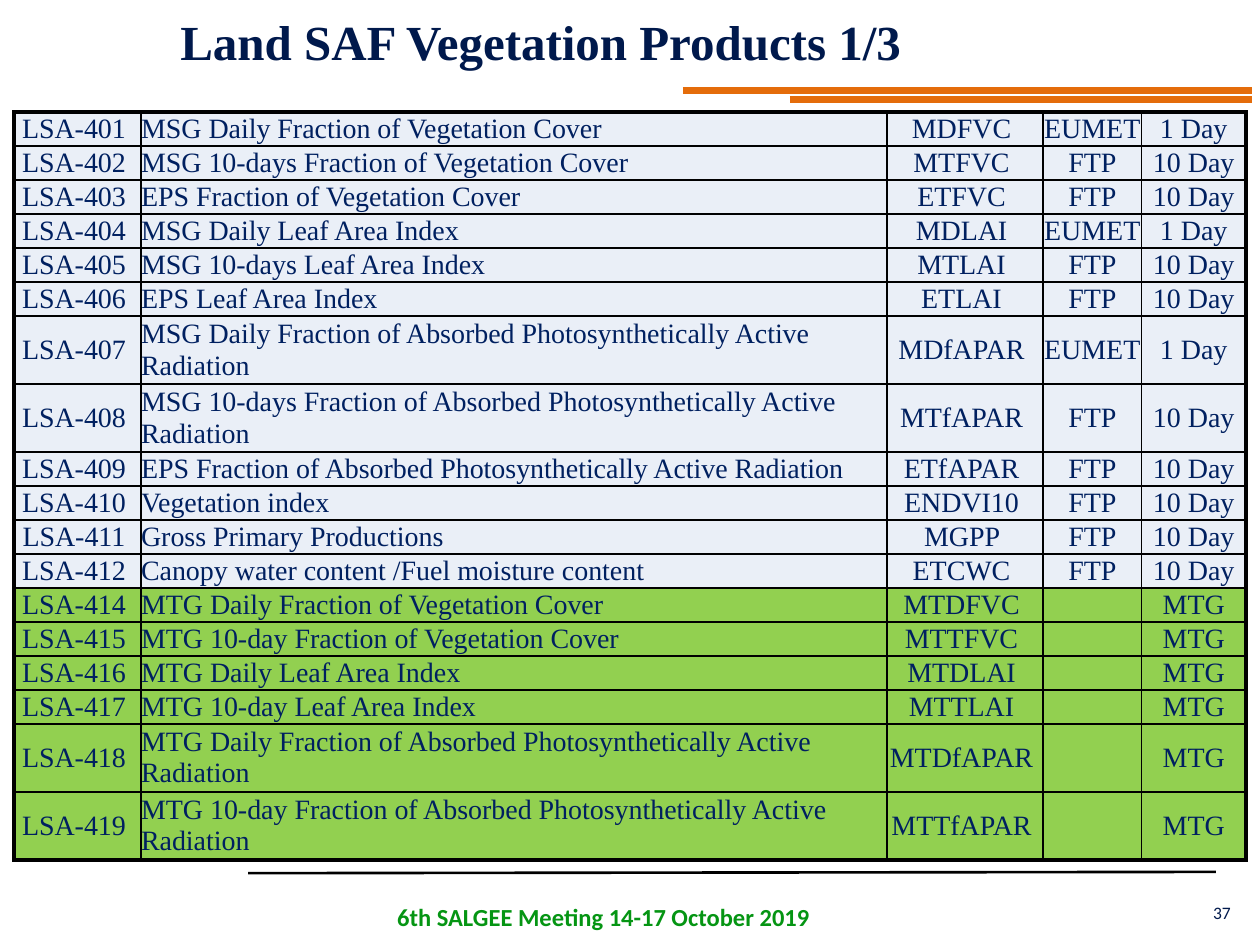
from dataclasses import dataclass

from lxml import etree
from pptx import Presentation
from pptx import util as u
from pptx.dml import color
from pptx.enum import shapes, text
from pptx.oxml import ns


@dataclass(frozen=True)
class Theme:
    serif: str = "Times New Roman"
    sans: str = "Calibri"
    navy: str = "00194C"
    cell_text: str = "002060"
    current: str = "EAEFF7"
    planned: str = "92D050"
    orange: str = "E46C0A"
    green: str = "059513"
    black: str = "000000"
    title_size: float = 28
    cell_size: float = 16
    footer_size: float = 14
    number_size: float = 10
    frame_width: float = 2.25
    grid_width: float = 1


THEME = Theme()
COLUMN_WIDTHS = (1.01, 5.92, 1.24, 0.78, 0.83)
ROW_HEIGHT = 0.27
FAPAR = "Fraction of Absorbed Photosynthetically Active Radiation"

# Number, product, short name, delivery, frequency
CURRENT_PRODUCTS = [
    ("401", "MSG Daily Fraction of Vegetation Cover", "MDFVC", "EUMET", "1 Day"),
    ("402", "MSG 10-days Fraction of Vegetation Cover", "MTFVC", "FTP", "10 Day"),
    ("403", "EPS Fraction of Vegetation Cover", "ETFVC", "FTP", "10 Day"),
    ("404", "MSG Daily Leaf Area Index", "MDLAI", "EUMET", "1 Day"),
    ("405", "MSG 10-days Leaf Area Index", "MTLAI", "FTP", "10 Day"),
    ("406", "EPS Leaf Area Index", "ETLAI", "FTP", "10 Day"),
    ("407", f"MSG Daily {FAPAR}", "MDfAPAR", "EUMET", "1 Day"),
    ("408", f"MSG 10-days {FAPAR}", "MTfAPAR", "FTP", "10 Day"),
    ("409", f"EPS {FAPAR}", "ETfAPAR", "FTP", "10 Day"),
    ("410", "Vegetation index", "ENDVI10", "FTP", "10 Day"),
    ("411", "Gross Primary Productions", "MGPP", "FTP", "10 Day"),
    ("412", "Canopy water content /Fuel moisture content", "ETCWC", "FTP", "10 Day"),
]
PLANNED_PRODUCTS = [
    ("414", "MTG Daily Fraction of Vegetation Cover", "MTDFVC", "", "MTG"),
    ("415", "MTG 10-day Fraction of Vegetation Cover", "MTTFVC", "", "MTG"),
    ("416", "MTG Daily Leaf Area Index", "MTDLAI", "", "MTG"),
    ("417", "MTG 10-day Leaf Area Index", "MTTLAI", "", "MTG"),
    ("418", f"MTG Daily {FAPAR}", "MTDfAPAR", "", "MTG"),
    ("419", f"MTG 10-day {FAPAR}", "MTTfAPAR", "", "MTG"),
]
TWO_LINE_PRODUCTS = {"407", "408", "418", "419"}


def inches(box):
    return [u.Inches(length) for length in box]


def add_run(paragraph, wording, font_name, size, rgb, bold=False):
    run = paragraph.add_run()
    run.text = wording
    run.font.name = font_name
    run.font.size = u.Pt(size)
    run.font.bold = bold
    run.font.color.rgb = color.RGBColor.from_string(rgb)


def add_rule(slide, start, end, rgb, width):
    rule = slide.shapes.add_connector(
        shapes.MSO_CONNECTOR.STRAIGHT, *inches(start + end))
    rule.line.color.rgb = color.RGBColor.from_string(rgb)
    rule.line.width = u.Pt(width)
    etree.SubElement(rule._element.spPr, ns.qn("a:effectLst"))


def add_title(slide, box):
    title = slide.shapes.title
    title.left, title.top, title.width, title.height = inches(box)
    frame = title.text_frame
    frame.word_wrap = True
    frame.auto_size = text.MSO_AUTO_SIZE.NONE
    frame.vertical_anchor = text.MSO_ANCHOR.TOP
    heading = frame.paragraphs[0]
    heading.alignment = text.PP_ALIGN.CENTER
    heading.line_spacing = 1.0
    add_run(heading, "Land SAF Vegetation Products 1/3",
            THEME.serif, THEME.title_size, THEME.navy, bold=True)


def add_header_rules(slide, box):
    left, top, width, height = box
    right = left + width
    add_rule(slide, (left + 0.85, top + height), (right, top + height),
             THEME.orange, 4)
    add_rule(slide, (left, top), (right, top), THEME.orange, 4)


def set_border(cell, side, width):
    border = etree.SubElement(cell._tc.get_or_add_tcPr(), ns.qn(f"a:ln{side}"),
                              w=str(u.Pt(width)))
    fill = etree.SubElement(border, ns.qn("a:solidFill"))
    etree.SubElement(fill, ns.qn("a:srgbClr"), val=THEME.black)


def fill_cell(cell, wording, alignment, fill, outer_sides):
    cell.margin_left = cell.margin_right = cell.margin_top = cell.margin_bottom = 0
    cell.vertical_anchor = text.MSO_ANCHOR.MIDDLE
    for side in "LRTB":
        set_border(cell, side,
                   THEME.frame_width if side in outer_sides else THEME.grid_width)
    cell.fill.solid()
    cell.fill.fore_color.rgb = color.RGBColor.from_string(fill)
    paragraph = cell.text_frame.paragraphs[0]
    paragraph.alignment = alignment
    if wording:
        add_run(paragraph, wording, THEME.serif, THEME.cell_size, THEME.cell_text)
    else:
        # Keeps an empty cell from stretching its row
        etree.SubElement(paragraph._p, ns.qn("a:endParaRPr"),
                         sz=str(THEME.cell_size * 100))


def add_product_table(slide, box):
    products = CURRENT_PRODUCTS + PLANNED_PRODUCTS
    last_row, last_column = len(products) - 1, len(COLUMN_WIDTHS) - 1
    table = slide.shapes.add_table(
        len(products), len(COLUMN_WIDTHS), *inches(box)).table
    table.first_row = table.horz_banding = False
    for column, width in zip(table.columns, COLUMN_WIDTHS):
        column.width = u.Inches(width)

    for r, (number, product, short_name, delivery, frequency) in enumerate(products):
        lines = 2 if number in TWO_LINE_PRODUCTS else 1
        table.rows[r].height = u.Inches(ROW_HEIGHT * lines)
        fill = THEME.current if r < len(CURRENT_PRODUCTS) else THEME.planned
        wordings = (f"LSA-{number} ", product, f"{short_name} ", delivery, frequency)
        for c, wording in enumerate(wordings):
            outer_sides = (("T" if r == 0 else "") + ("B" if r == last_row else "")
                           + ("L" if c == 0 else "") + ("R" if c == last_column else ""))
            alignment = text.PP_ALIGN.LEFT if c == 1 else text.PP_ALIGN.CENTER
            fill_cell(table.cell(r, c), wording, alignment, fill, outer_sides)


def add_footer(slide, box):
    left, top, width, _ = box
    add_rule(slide, (left, top + 0.01), (left + 7.68, top), THEME.black, 1.5)

    meeting = slide.shapes.add_textbox(
        *inches((left + 0.86, top + 0.19, 3.92, 0.34))).text_frame
    meeting.word_wrap = True
    meeting.paragraphs[0].alignment = text.PP_ALIGN.CENTER
    add_run(meeting.paragraphs[0], "6th SALGEE Meeting 14-17 October 2019",
            THEME.sans, THEME.footer_size, THEME.green, bold=True)

    number = slide.shapes.add_textbox(
        *inches((left + width - 0.36, top + 0.19, 0.36, 0.27))).text_frame
    number.word_wrap = False
    add_run(number.paragraphs[0], "37", THEME.sans, THEME.number_size, THEME.navy)


def main():
    deck = Presentation()
    deck.slide_width, deck.slide_height = u.Inches(10), u.Inches(7.5)
    slide = deck.slides.add_slide(deck.slide_layouts[5])
    add_header_rules(slide, (5.42, 0.72, 4.52, 0.07))
    add_footer(slide, (1.97, 6.92, 7.92, 0.53))
    add_product_table(slide, (0.11, 0.89, 9.78, 5.94))
    add_title(slide, (0.7, 0.04, 7.18, 0.57))
    deck.save("out.pptx")


if __name__ == "__main__":
    main()
